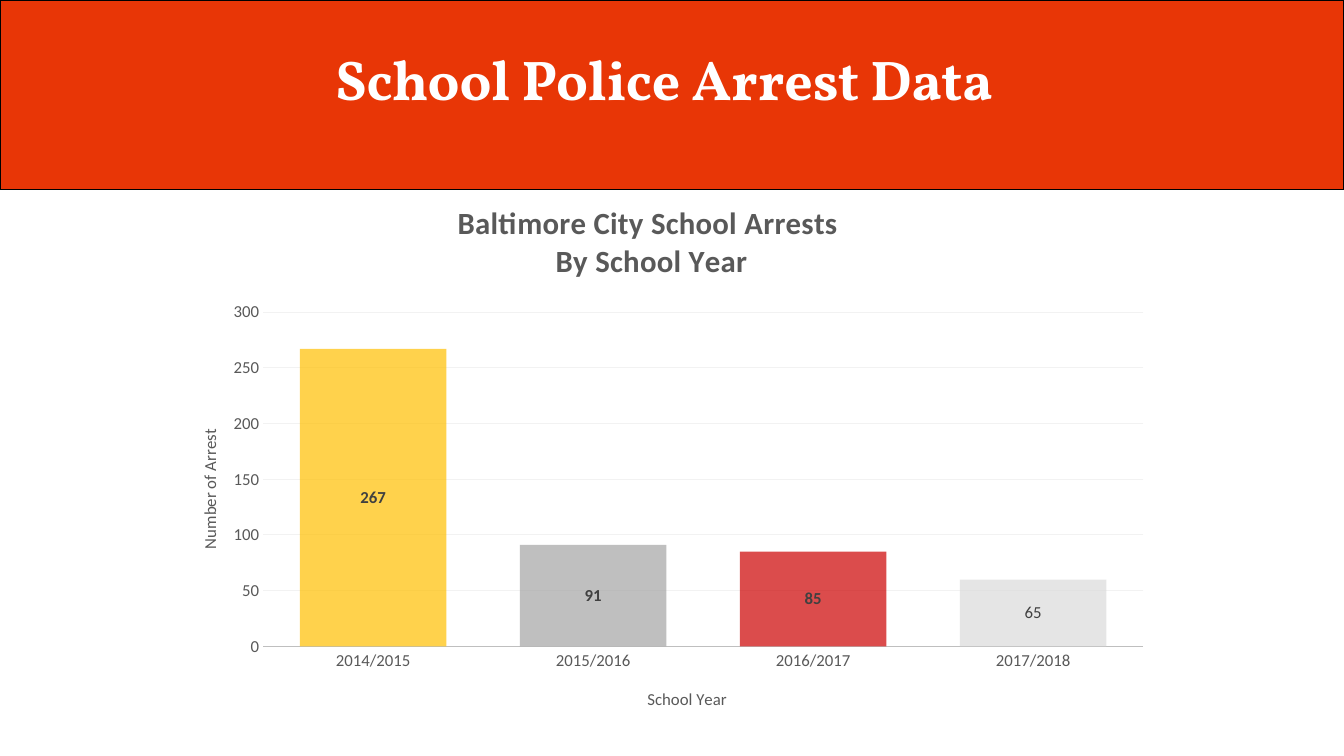
from lxml import etree
from pptx import Presentation
from pptx.chart.data import CategoryChartData
from pptx.dml.color import RGBColor
from pptx.enum.chart import XL_CHART_TYPE, XL_LABEL_POSITION, XL_TICK_MARK
from pptx.enum.shapes import MSO_SHAPE
from pptx.enum.text import MSO_ANCHOR, MSO_AUTO_SIZE, PP_ALIGN
from pptx.oxml.ns import qn
from pptx.util import Pt

STACKED = XL_CHART_TYPE.COLUMN_STACKED
LABEL_CENTER = XL_LABEL_POSITION.CENTER
NO_TICK = XL_TICK_MARK.NONE
RECTANGLE = MSO_SHAPE.RECTANGLE
MIDDLE = MSO_ANCHOR.MIDDLE
NO_AUTOFIT = MSO_AUTO_SIZE.NONE
CENTER = PP_ALIGN.CENTER

BLACK = RGBColor(0x00, 0x00, 0x00)
WHITE = RGBColor(0xFF, 0xFF, 0xFF)
ORANGE = RGBColor(0xE8, 0x36, 0x06)
TEXT_GREY = RGBColor(0x59, 0x59, 0x59)
LABEL_GREY = RGBColor(0x40, 0x40, 0x40)
AXIS_GREY = RGBColor(0xBF, 0xBF, 0xBF)
GRID_GREY = RGBColor(0xF2, 0xF2, 0xF2)
GOLD = RGBColor(0xFF, 0xC0, 0x00)
SILVER = RGBColor(0xA5, 0xA5, 0xA5)
RED = RGBColor(0xCC, 0x00, 0x00)
PALE_GREY = RGBColor(0xDB, 0xDB, 0xDB)

WIDTH, HEIGHT = 960, 540
BAND_HEIGHT = 135.36
ARRESTS = [
    ("2014/2015", 267, GOLD),
    ("2015/2016", 91, SILVER),
    ("2016/2017", 85, RED),
    ("2017/2018", 60, PALE_GREY),
]
LAST_YEAR_LABEL = "65"


def format_font(font, color, **values):
    for name, value in values.items():
        setattr(font, name, value)
    font.color.rgb = color


def manual_layout(**values):
    """Return a c:layout element from fractions of the chart's size."""
    layout = etree.Element(qn("c:layout"))
    manual = etree.SubElement(layout, qn("c:manualLayout"))
    if "w" in values:
        etree.SubElement(manual, qn("c:layoutTarget")).set("val", "inner")
    for mode in ("xMode", "yMode"):
        etree.SubElement(manual, qn(f"c:{mode}")).set("val", "edge")
    for name, value in values.items():
        etree.SubElement(manual, qn(f"c:{name}")).set("val", str(value))
    return layout


def remove_layout(parent):
    for layout in parent.findall(qn("c:layout")):
        parent.remove(layout)


def write_title(owner, lines, x, y, size, bold=False, spacing=0):
    """Give a chart or an axis a title at a fraction of the chart's size."""
    owner.has_title = True
    title = owner.chart_title if hasattr(owner, "chart_title") else owner.axis_title
    frame = title.text_frame
    for index, line in enumerate(lines):
        paragraph = frame.add_paragraph() if index else frame.paragraphs[0]
        paragraph.alignment = CENTER
        run = paragraph.add_run()
        run.text = line
        format_font(run.font, TEXT_GREY, name="Calibri", size=Pt(size), bold=bold)
        run.font._element.set("spc", str(spacing))
    element = title._element
    remove_layout(element)
    element.find(qn("c:tx")).addnext(manual_layout(x=x, y=y))


def add_header(slide, left, top, width, height):
    band = slide.shapes.add_shape(RECTANGLE, Pt(left), Pt(top), Pt(width), Pt(height))
    band.shadow.inherit = False
    band.fill.solid()
    band.fill.fore_color.rgb = ORANGE
    band.line.color.rgb = BLACK
    band.line.width = Pt(1)

    title = slide.shapes.title
    title._element.addprevious(band._element)
    title.left, title.top = Pt(left + 226.8), Pt(top + 19.44)
    title.width, title.height = Pt(495.36), Pt(78.48)
    frame = title.text_frame
    frame.text = "School Police Arrest Data"
    frame.auto_size = NO_AUTOFIT
    frame.word_wrap = True
    frame.vertical_anchor = MIDDLE
    paragraph = frame.paragraphs[0]
    paragraph.alignment = CENTER
    paragraph.line_spacing = 0.9
    format_font(paragraph.runs[0].font, WHITE, name="Vollkorn", size=Pt(40), bold=True)


def format_axes(chart):
    years, counts = chart.category_axis, chart.value_axis
    for axis in (years, counts):
        axis.major_tick_mark = axis.minor_tick_mark = NO_TICK
        format_font(axis.tick_labels.font, TEXT_GREY, name="Calibri", size=Pt(12))
    years.format.line.color.rgb = AXIS_GREY
    years.format.line.width = Pt(0.75)
    for name, value in {"minimum_scale": 0, "maximum_scale": 300, "major_unit": 50}.items():
        setattr(counts, name, value)
    counts.format.line.fill.background()
    grid = counts.major_gridlines.format.line
    grid.color.rgb = GRID_GREY
    grid.width = Pt(0.75)
    write_title(years, ["School Year"], 0.48, 0.92, 12)
    write_title(counts, ["Number of Arrest"], 0.03, 0.44, 12)


def format_columns(plot):
    plot.gap_width, plot.overlap = 50, 100
    plot.vary_by_categories = False
    series = plot.series[0]
    for index, (_, _, color) in enumerate(ARRESTS):
        fill = series.points[index].format.fill
        fill.solid()
        fill.fore_color.rgb = color
        rgb = fill._xPr.find(".//" + qn("a:srgbClr"))
        etree.SubElement(rgb, qn("a:alpha")).set("val", "70000")

    labels = series.data_labels
    labels.show_value = True
    labels.position = LABEL_CENTER
    format_font(labels.font, LABEL_GREY, name="Calibri", size=Pt(12), bold=True)
    last_label = series.points[len(ARRESTS) - 1].data_label
    run = last_label.text_frame.paragraphs[0].add_run()
    run.text = LAST_YEAR_LABEL
    format_font(run.font, LABEL_GREY, name="Calibri", size=Pt(12), bold=False)
    last_label.position = LABEL_CENTER


def add_arrest_chart(slide, left, top, width, height):
    data = CategoryChartData()
    data.categories = [year for year, _, _ in ARRESTS]
    data.add_series("Series 1", [count for _, count, _ in ARRESTS])
    chart = slide.shapes.add_chart(
        STACKED, Pt(left), Pt(top), Pt(width), Pt(height), data
    ).chart
    chart.has_legend = False
    format_font(chart.font, BLACK, name="Calibri", size=Pt(10))
    write_title(
        chart,
        ["Baltimore City School Arrests ", "By School Year"],
        0.29, 0.02, 22, bold=True, spacing=30,
    )
    format_axes(chart)
    format_columns(chart.plots[0])
    plot_area = chart._chartSpace.chart.plotArea
    remove_layout(plot_area)
    plot_area.insert(0, manual_layout(x=0.098, y=0.228, w=0.882, h=0.621))


def main():
    deck = Presentation()
    deck.slide_width, deck.slide_height = Pt(WIDTH), Pt(HEIGHT)
    slide = deck.slides.add_slide(deck.slide_layouts[5])
    add_header(slide, 0, 0, WIDTH, BAND_HEIGHT)
    add_arrest_chart(slide, 118.08, BAND_HEIGHT, 712.8, 384.48)
    deck.save("out.pptx")


if __name__ == "__main__":
    main()
